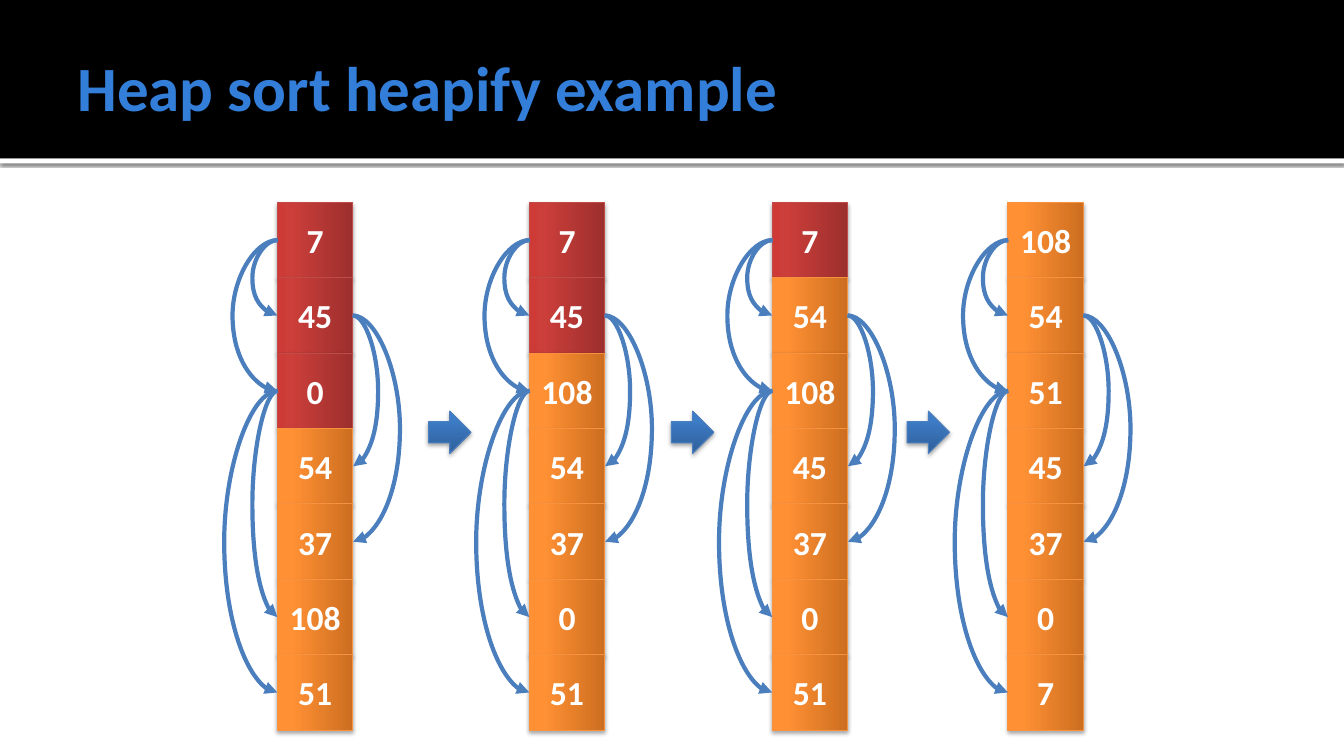
"""Build the heap sort heapify example slide."""
from copy import deepcopy

from lxml import etree
from pptx import Presentation
from pptx import util as u
from pptx.dml.color import RGBColor
from pptx.enum import shapes, text
from pptx.oxml.ns import qn

COLORS = {"black": "000000", "white": "FFFFFF", "title": "337ED9",
          "red_line": "BF4C48", "orange_line": "F69240", "blue_line": "4B7EBC"}
GRADIENTS = {"red": ("9C2F2D", "CB3E3A", "CE3B37"),
             "orange": ("CC6E20", "FF9034", "FF9136"),
             "blue": ("2F5F99", "3D7CC7", "3A7CCB")}

CELL, TOP = 1.9, 5.1
HAIR = 0.01
STEPS = [(6.99, 3, [7, 45, 0, 54, 37, 108, 51]),
         (13.34, 2, [7, 45, 108, 54, 37, 0, 51]),
         (19.46, 1, [7, 54, 108, 45, 37, 0, 51]),
         (25.4, 0, [108, 54, 51, 45, 37, 0, 7])]
CHILD_LINKS = [("left", 0, 1, 0.64), ("left", 0, 2, 1.14),
               ("right", 1, 3, 0.64), ("right", 1, 4, 1.19),
               ("left", 2, 5, 0.64), ("left", 2, 6, 1.35)]


def add_shadow(shape, blur, distance, opacity):
    shape.shadow.inherit = False
    effects = shape._element.spPr.find(qn("a:effectLst"))
    shadow = etree.SubElement(effects, qn("a:outerShdw"), blurRad=str(u.Pt(blur)),
                              dist=str(u.Pt(distance)), dir="5400000", rotWithShape="0")
    shade = etree.SubElement(shadow, qn("a:srgbClr"), val=COLORS["black"])
    etree.SubElement(shade, qn("a:alpha"), val=str(opacity * 1000))


def add_glossy(kind, left, top, size, hue, angle):
    shape = slide.shapes.add_shape(kind, u.Cm(left), u.Cm(top), u.Cm(size), u.Cm(size))
    shape.fill.gradient()
    shape.fill.gradient_angle = angle
    stops = shape._element.spPr.find(".//" + qn("a:gsLst"))
    stops.append(deepcopy(stops[0]))
    for stop, position, color in zip(shape.fill.gradient_stops, (0, 0.8, 1), GRADIENTS[hue]):
        stop.position = position
        stop.color.rgb = RGBColor.from_string(color)
    shape.line.color.rgb = RGBColor.from_string(COLORS[hue + "_line"])
    shape.line.width = u.Pt(0.75)
    add_shadow(shape, 3.1, 1.8, 35)
    return shape


prs = Presentation()
prs.slide_width, prs.slide_height = u.Cm(33.87), u.Cm(19.05)
slide = prs.slides.add_slide(prs.slide_layouts[6])

for top, height, color in ((3.99, 0.13, "white"), (0, 3.99, "black")):
    band = slide.shapes.add_shape(shapes.MSO_SHAPE.RECTANGLE, 0, u.Cm(top),
                                  prs.slide_width, u.Cm(height))
    band.fill.solid()
    band.fill.fore_color.rgb = RGBColor.from_string(COLORS[color])
    band.line.fill.background()
    if color == "white":
        add_shadow(band, 2.5, 0.8, 60)
    else:
        band.shadow.inherit = False

title = slide.shapes.add_textbox(u.Cm(1.7), u.Cm(0.43), u.Cm(30.48), u.Cm(3.48)).text_frame
title.word_wrap = True
title.vertical_anchor = text.MSO_ANCHOR.MIDDLE
title.margin_left = u.Cm(0.25)
title.margin_right = u.Cm(0.13)
title.text = "Heap sort heapify example"
title_font = title.paragraphs[0].runs[0].font
title_font.name, title_font.size, title_font.bold = "Calibri", u.Pt(45), True
title_font.color.rgb = RGBColor.from_string(COLORS["title"])

for step, (left, pending, values) in enumerate(STEPS):
    for index, value in enumerate(values):
        hue = "red" if index < pending else "orange"
        cell = add_glossy(shapes.MSO_SHAPE.RECTANGLE, left, TOP + index * CELL, CELL, hue, 180)
        label = cell.text_frame
        label.word_wrap = False
        label.vertical_anchor = text.MSO_ANCHOR.MIDDLE
        label.text = str(value)
        label.paragraphs[0].alignment = text.PP_ALIGN.CENTER
        font = label.paragraphs[0].runs[0].font
        font.name, font.size, font.bold = "Calibri", u.Pt(24), True
        font.color.rgb = RGBColor.from_string(COLORS["white"])

    for side, parent, child, bulge in CHILD_LINKS:
        edge = left if side == "left" else left + CELL
        link = slide.shapes.add_connector(
            shapes.MSO_CONNECTOR.CURVE, u.Cm(edge), u.Cm(TOP + (parent + 0.5) * CELL),
            u.Cm(edge + HAIR), u.Cm(TOP + (child + 0.5) * CELL))
        link.line.color.rgb = RGBColor.from_string(COLORS["blue_line"])
        link.line.width = u.Pt(3)
        outline = link._element.spPr
        if side == "left":
            frame = outline.find(qn("a:xfrm"))
            frame.set("rot", "10800000")
            frame.set("flipV", "1")
        etree.SubElement(outline.find(".//" + qn("a:avLst")), qn("a:gd"), name="adj1",
                         fmla=f"val {round(bulge / HAIR * 100000)}")
        etree.SubElement(outline.find(qn("a:ln")), qn("a:tailEnd"), type="triangle")
        etree.SubElement(outline, qn("a:effectLst"))

    if step:
        add_glossy(shapes.MSO_SHAPE.RIGHT_ARROW, left - 2.54, 10.36, 1.07, "blue", 90)

prs.save("out.pptx")
